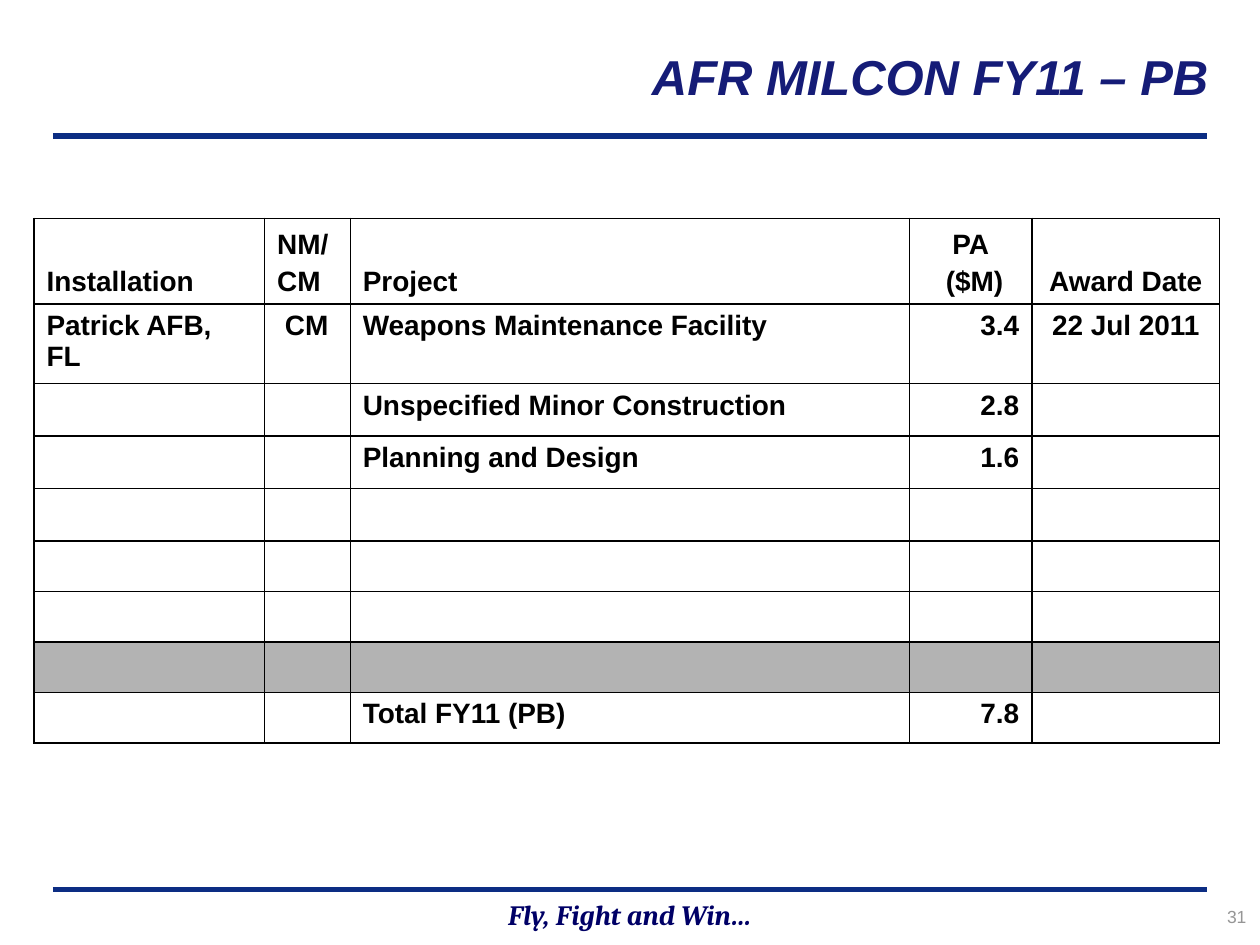
from lxml.etree import SubElement
from pptx import Presentation
from pptx.dml.color import RGBColor
from pptx.enum.shapes import MSO_CONNECTOR as Connector
from pptx.enum.text import MSO_ANCHOR as Anchor, PP_ALIGN as Align
from pptx.oxml.ns import qn
from pptx.util import Pt

THEME = {
    "rule": "0C2D83",
    "border": "000000",
    "band": "B3B3B3",
    "title": {"name": "Arial", "size": 28, "color": "151C77", "bold": True, "italic": True},
    "motto": {"name": "Cambria", "size": 16, "color": "000066", "bold": True, "italic": True},
    "number": {"name": "Arial", "size": 10, "color": "969696"},
    "cell": {"name": "Arial", "size": 16, "color": "000000", "bold": True},
}

CAPTIONS = [
    ("Fly, Fight and Win…", "motto", (0, 509, 720, 26.6), Align.CENTER, Anchor.MIDDLE),
    ("31", "number", (629.3, 514.1, 90, 23.8), Align.RIGHT, Anchor.TOP),
    ("AFR MILCON FY11 – PB", "title", (66.2, 12.2, 631.4, 61.9), Align.RIGHT, Anchor.MIDDLE),
]
RULE_LEFT, RULE_RIGHT = 30.2, 689.8
RULE_LEVELS = [508.3, 77.8]

BLANK_ROW = ("",) * 5
PROJECTS = [
    ("Installation", "NM/\nCM", "Project", "PA\n ($M)", "Award Date"),
    ("Patrick AFB, FL", " CM", "Weapons Maintenance Facility", "3.4", "22 Jul 2011"),
    ("", "", "Unspecified Minor Construction", "2.8", ""),
    ("", "", "Planning and Design", "1.6", ""),
    *[BLANK_ROW] * 4,
    ("", "", "Total FY11 (PB)", "7.8", ""),
]
BAND_ROW = 7
COLUMN_WIDTHS = [131.8, 49, 319.7, 69.8, 107.3]
ROW_HEIGHTS = [48, 45.6] + [30] * 3 + [28] * 4
TABLE_LEFT, TABLE_TOP = 19.4, 124.8
HEADER_ALIGN = [Align.LEFT, Align.LEFT, Align.LEFT, Align.CENTER, Align.CENTER]
BODY_ALIGN = [Align.LEFT, Align.LEFT, Align.LEFT, Align.RIGHT, Align.CENTER]


def apply_format(font, style):
    for attribute, value in style.items():
        if attribute == "color":
            font.color.rgb = RGBColor.from_string(value)
        else:
            setattr(font, attribute, Pt(value) if attribute == "size" else value)


def write(frame, text, style, align):
    for index, line in enumerate(text.split("\n")):
        paragraph = frame.paragraphs[0] if index == 0 else frame.add_paragraph()
        paragraph.alignment = align
        if index:
            paragraph.space_before = Pt(0.2 * style["size"])
        run = paragraph.add_run()
        run.text = line
        apply_format(run.font, style)


def add_rule(slide, level):
    rule = slide.shapes.add_connector(
        Connector.STRAIGHT, Pt(RULE_LEFT), Pt(level), Pt(RULE_RIGHT), Pt(level))
    rule.line.width = Pt(3)
    rule.line.color.rgb = RGBColor.from_string(THEME["rule"])
    SubElement(rule._element.spPr, qn("a:effectLst"))


def add_caption(slide, text, role, box, align, anchor):
    frame = slide.shapes.add_textbox(*map(Pt, box)).text_frame
    frame.word_wrap = True
    frame.vertical_anchor = anchor
    write(frame, text, THEME[role], align)


def add_borders(cell):
    properties = cell._tc.get_or_add_tcPr()
    for index, side in enumerate(("a:lnL", "a:lnR", "a:lnT", "a:lnB")):
        border = properties.makeelement(qn(side), {"w": str(Pt(1))})
        fill = SubElement(border, qn("a:solidFill"))
        SubElement(fill, qn("a:srgbClr"), val=THEME["border"])
        properties.insert(index, border)


def add_projects(slide):
    table = slide.shapes.add_table(
        len(PROJECTS), len(COLUMN_WIDTHS), Pt(TABLE_LEFT), Pt(TABLE_TOP),
        Pt(sum(COLUMN_WIDTHS)), Pt(sum(ROW_HEIGHTS))).table
    table.first_row = table.horz_banding = False
    for column, width in zip(table.columns, COLUMN_WIDTHS):
        column.width = Pt(width)
    for row_index, (row, height) in enumerate(zip(table.rows, ROW_HEIGHTS)):
        row.height = Pt(height)
        aligns = BODY_ALIGN if row_index else HEADER_ALIGN
        for cell, text, align in zip(row.cells, PROJECTS[row_index], aligns):
            cell.vertical_anchor = Anchor.TOP if row_index else Anchor.BOTTOM
            if row_index == BAND_ROW:
                cell.fill.solid()
                cell.fill.fore_color.rgb = RGBColor.from_string(THEME["band"])
            else:
                cell.fill.background()
            add_borders(cell)
            if text:
                write(cell.text_frame, text, THEME["cell"], align)


def main():
    deck = Presentation()
    deck.slide_width, deck.slide_height = Pt(720), Pt(540)
    slide = deck.slides.add_slide(deck.slide_layouts[6])
    for level in RULE_LEVELS:
        add_rule(slide, level)
    for caption in CAPTIONS:
        add_caption(slide, *caption)
    add_projects(slide)
    deck.save("out.pptx")


if __name__ == "__main__":
    main()
